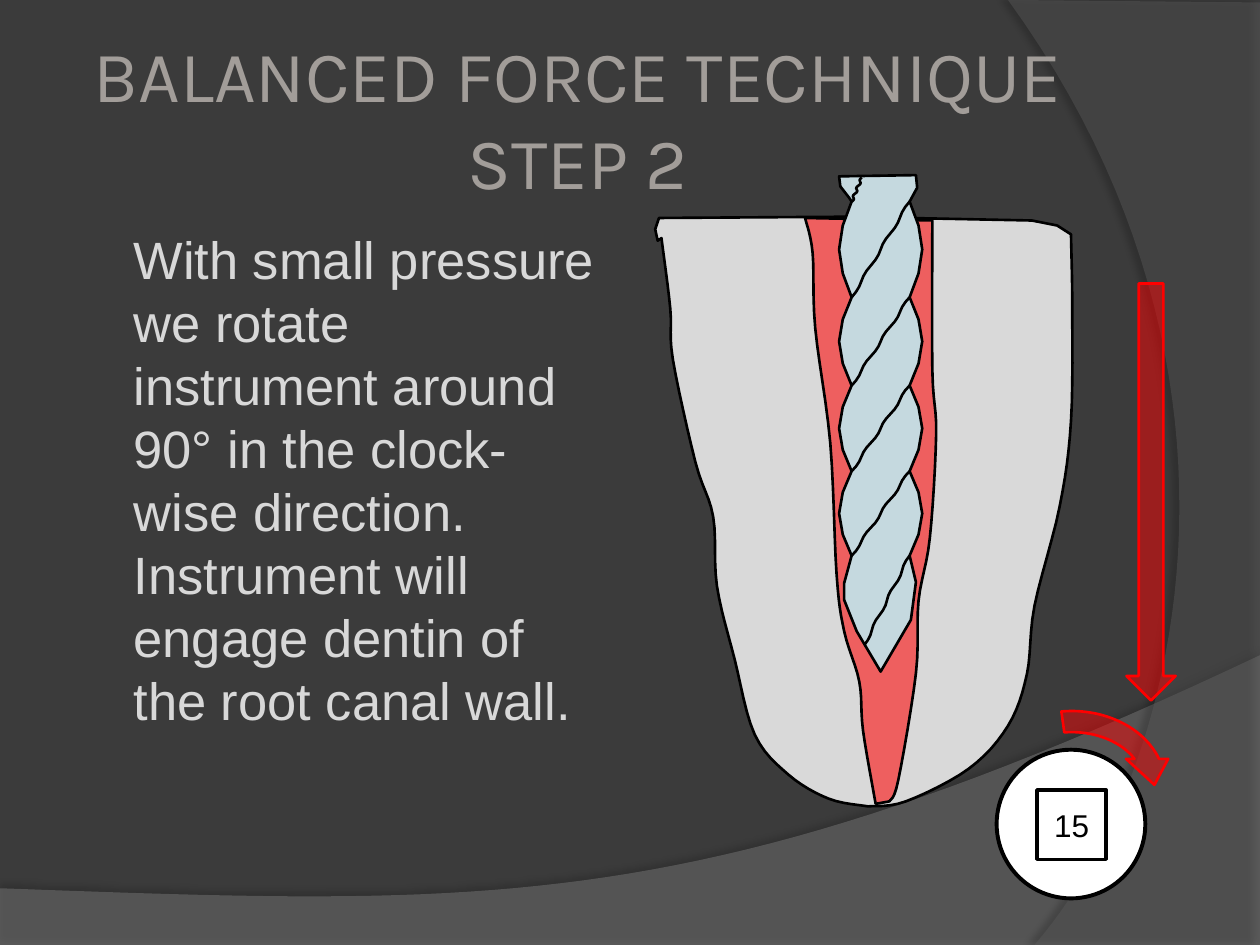
from itertools import pairwise
from math import pi, sin

from lxml.etree import SubElement as Sub
from pptx import Presentation
from pptx.dml.color import RGBColor as RGB
from pptx.enum.shapes import MSO_SHAPE as Kind
from pptx.enum.text import MSO_ANCHOR as Anchor, PP_ALIGN as Align
from pptx.oxml.ns import qn
from pptx.util import Inches, Pt

# Content
TITLE = ["BALANCED FORCE TECHNIQUE", "STEP 2"]
BODY = ("With small pressure we rotate instrument around 90° in the "
        "clock-wise direction. Instrument will engage dentin of the "
        "root canal wall.")
SIZE = "15"

HEX = {"back": "3B3B3B", "wave": "7F7F7F", "side": "5E5E5E",
       "title": "A29D99", "body": "D8D8D8", "tooth": "D9D9D9",
       "steel": "C5D9DF", "red": "FF0000", "white": "FFFFFF",
       "black": "000000"}

# Walls in inches: each is a smooth curve through a few knots
CROWN = [(8.5, 1.86), (8.39, 1.79), (8.19, 1.75), (6.72, 1.72),
         (5.23, 1.73), (5.2, 1.82), (5.22, 1.91)]
LEFT = [(5.25, 1.89), (5.32, 2.45), (5.34, 2.85), (5.52, 3.67),
        (5.66, 4.1), (5.69, 4.65), (5.83, 5.23), (5.99, 5.83),
        (6.26, 6.15), (6.58, 6.34), (6.89, 6.4)]
RIGHT = [(6.89, 6.4), (7.19, 6.36), (7.69, 6.1), (8, 5.76), (8.15, 5.35),
         (8.21, 4.81), (8.41, 4.02), (8.5, 3.34), (8.51, 2.44), (8.5, 1.86)]
CANAL_IN = [(6.39, 1.73), (6.45, 2.01), (6.47, 2.6), (6.59, 3.52),
            (6.64, 4.56), (6.7, 5.01), (6.82, 5.41), (6.85, 5.8),
            (6.95, 6.38)]
CANAL_OUT = [(7.06, 6.36), (7.13, 6.19), (7.27, 5.34), (7.29, 4.77),
             (7.38, 4.27), (7.43, 3.44), (7.4, 2.94), (7.4, 1.75)]

# Instrument: bulges between waists, with a shank above and a tip below
WAISTS = [1.6, 2.36, 3.06, 3.74, 4.41]
WAIST_L, WAIST_R, BULGE = 6.76, 7.22, 0.1
SHANK = [(7.28, 1.49), (7.27, 1.39), (6.66, 1.4), (6.67, 1.48), (6.74, 1.57)]
TIP = [(6.7, 4.63), (6.7, 4.76), (6.8, 5.01), (6.99, 5.33),
       (7.23, 4.92), (7.27, 4.62)]
TIP_EDGE, SHANK_EDGE = (6.86, 5.12), (6.84, 1.41)

prs = Presentation()
prs.slide_width, prs.slide_height = Inches(10), Inches(7.5)
slide = prs.slides.add_slide(prs.slide_layouts[6])
slide.background.fill.solid()
slide.background.fill.fore_color.rgb = RGB.from_string(HEX["back"])
shapes = slide.shapes


def paint(shape, fill=None, line=None, width=1.5, alpha=100):
    shape.shadow.inherit = False
    if fill:
        shape.fill.solid()
        shape.fill.fore_color.rgb = RGB.from_string(HEX[fill])
        if alpha < 100:
            tone = shape.fill._xPr.find(qn("a:solidFill"))[0]
            Sub(tone, qn("a:alpha"), val=str(alpha * 1000))
    else:
        shape.fill.background()
    if line:
        shape.line.color.rgb = RGB.from_string(HEX[line])
        shape.line.width = Pt(width)
    else:
        shape.line.fill.background()
    return shape


def draw(pts, close=True, **look):
    pts = [(Inches(x), Inches(y)) for x, y in pts]
    pen = shapes.build_freeform(*pts[0], scale=1.0)
    pen.add_line_segments(pts[1:], close=close)
    return paint(pen.convert_to_shape(), **look)


def bend(a, b, c, d, steps=48):
    """Points along a cubic curve with handles b and c."""
    ts = [i / steps for i in range(steps + 1)]
    return [tuple((1 - t)**3 * p + 3 * t * (1 - t)**2 * q
                  + 3 * t * t * (1 - t) * r + t**3 * s
                  for p, q, r, s in zip(a, b, c, d)) for t in ts]


def smooth(knots):
    """Join knots with curves; each handle follows the knots beside it."""
    ends = [knots[0], *knots, knots[-1]]
    pts = []
    for a, b, c, d in zip(ends, ends[1:], ends[2:], ends[3:]):
        lead = [q + (r - p) / 6 for p, q, r in zip(a, b, c)]
        trail = [r - (s - q) / 6 for q, r, s in zip(b, c, d)]
        pts += bend(b, lead, trail, c, 6)
    return pts


def bulges(x, swell):
    """One edge of the blade, swelling between each pair of waists."""
    return [(x + swell * sin(pi * k / 4), top + (low - top) * k / 4)
            for top, low in pairwise(WAISTS) for k in range(5)]


def flute(start, end, steps=18):
    """A cutting edge: a straight run with a slight ripple."""
    (x, y), (u, v) = start, end
    return [(x + (u - x) * k / steps + 0.01 * sin(6 * pi * k / steps),
             y + (v - y) * k / steps) for k in range(steps + 1)]


def shade(shape, alpha, dist, angle):
    fx = shape._element.spPr.find(qn("a:effectLst"))
    cast = Sub(fx, qn("a:outerShdw"), blurRad=str(Pt(4)),
               dist=str(Pt(dist)), dir=str(angle * 60000))
    tone = Sub(cast, qn("a:srgbClr"), val=HEX["black"])
    Sub(tone, qn("a:alpha"), val=str(alpha * 1000))


def add(kind, box, **look):
    return paint(shapes.add_shape(kind, *map(Inches, box)), **look)


def write(box, lines, size, font, color, align=Align.LEFT):
    frame = shapes.add_textbox(*map(Inches, box)).text_frame
    frame.word_wrap = True
    para = frame.paragraphs[0]
    para.alignment = align
    for i, line in enumerate(lines):
        if i:
            para.add_line_break()
        run = para.add_run()
        run.text = line
        run.font.size, run.font.name = Pt(size), font
        run.font.color.rgb = RGB.from_string(HEX[color])
    return frame


# Backdrop
wave = bend((10, 5.2), (5.59, 7.29), (3.91, 7.19), (0, 7.05))
shade(draw([(0, 7.51), (10, 7.51)] + wave, fill="wave", alpha=45),
      35, 3.5, 270)
side = bend((8.21, 7.5), (9.35, 6.19), (10.18, 3), (8, 0))
shade(draw([(10, 0.02), (10, 7.5)] + side, fill="side", alpha=40),
      45, 4, 180)

# Tooth and canal
draw(smooth(LEFT) + smooth(RIGHT) + CROWN, fill="tooth", line="black")
draw(smooth(CANAL_IN) + smooth(CANAL_OUT), fill="red", line="black",
     alpha=56)

# Title and body
head = write((0.5, 0.3, 8.17, 1.25), TITLE, 41.4, "Karla", "title",
             Align.CENTER)
head.vertical_anchor = Anchor.MIDDLE
head.margin_left = head.margin_right = Inches(0.05)
body = write((0.5, 1.75, 4.42, 4.95), [BODY], 30, "Arial", "body")
body.margin_left = Inches(0.56)
body.paragraphs[0].space_before = Pt(6)

# Instrument: down the left edge, round the tip, up the right edge
draw(SHANK + bulges(WAIST_L, -BULGE) + TIP + bulges(WAIST_R, BULGE)[::-1],
     fill="steel", line="black")
starts = [(WAIST_L, y) for y in WAISTS] + [TIP_EDGE]
ends = [SHANK_EDGE] + [(WAIST_R, y) for y in WAISTS]
for start, end in zip(starts, ends):
    draw(flute(start, end), close=False, line="black")

# Size mark
add(Kind.OVAL, (7.91, 5.95, 1.18, 1.18), fill="white", line="black",
    width=2.25)
add(Kind.RECTANGLE, (8.23, 6.27, 0.55, 0.55), fill="white", line="black",
    width=2)
write((8.15, 6.35, 0.71, 0.4), [SIZE], 18, "Arial", "black", Align.CENTER)

# Pressure and turn
add(Kind.DOWN_ARROW, (8.94, 2.25, 0.39, 3.31), fill="red", line="red",
    alpha=49)
turn = add(Kind.CIRCULAR_ARROW, (7.68, 5.56, 1.65, 1.34), fill="red",
           line="red", alpha=47)
for i, value in enumerate([0.125, 11.42, 204.58, 157.25, 0.125]):
    turn.adjustments[i] = value

prs.save("out.pptx")
